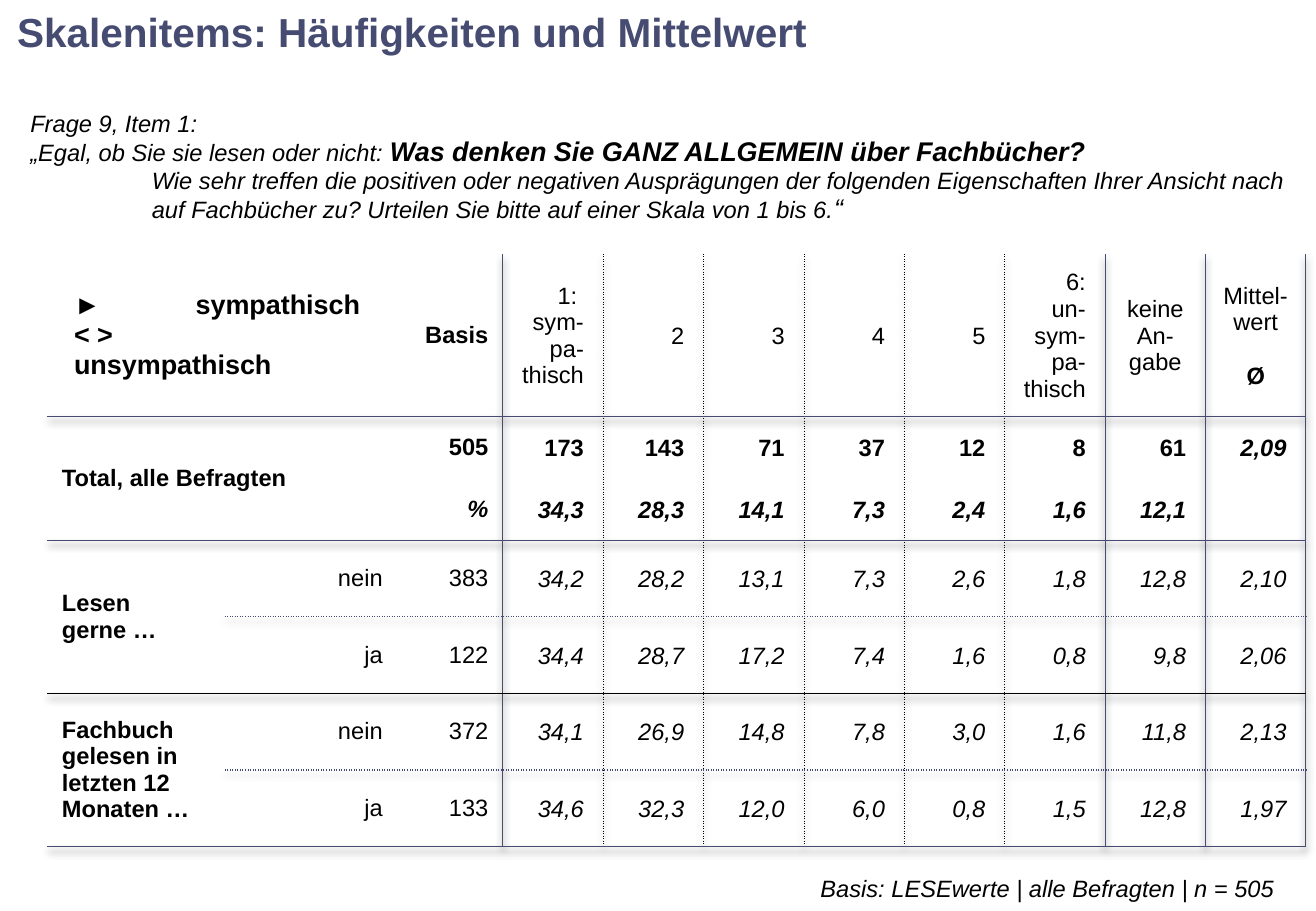
import pptx
import pptx.util
import pptx.oxml
import pptx.oxml.ns
import pptx.dml.color
import pptx.enum.text

Inches = pptx.util.Inches
ALIGN = {"l": pptx.enum.text.PP_ALIGN.LEFT, "c": pptx.enum.text.PP_ALIGN.CENTER,
         "r": pptx.enum.text.PP_ALIGN.RIGHT}
WIDTH, HEIGHT = 10.83, 7.5
NAVY, BLACK = "464B71", "000000"

# Content: a line is a list of (text, size, style); style letters: b bold, i italic
TITLE = [[("Skalenitems: Häufigkeiten und Mittelwert", 24, "b")]]
QUESTION = [
    [("Frage 9, Item 1:", 14, "i")],
    [("„Egal, ob Sie sie lesen oder nicht: ", 14, "i"),
     ("Was denken Sie GANZ ALLGEMEIN über Fachbücher?", 16, "bi")],
    [("Wie sehr treffen die positiven oder negativen Ausprägungen der folgenden "
      "Eigenschaften Ihrer Ansicht nach", 14, "i")],
    [("auf Fachbücher zu? Urteilen Sie bitte auf einer Skala von 1 bis 6.", 14, "i"),
     ("“", 16, "i")],
]
ITEM = "►\tsympathisch\n< >\nunsympathisch"
SCALE = ["1: \nsym-pa-thisch", "2", "3", "4", "5", "6:\nun-\nsym-\npa-thisch",
         "keine\nAn-\ngabe"]
MEAN = [[("Mittel-", 14, "")], [("wert", 14, "")], [("Ø", 14, "b")]]
GROUPS = {  # (row, column): (text, rows spanned, columns spanned)
    (2, 1): ("Total, alle Befragten", 2, 2),
    (4, 1): ("Lesen\ngerne …", 2, 1),
    (6, 1): ("Fachbuch\ngelesen in\nletzten 12\nMonaten …", 2, 1),
}
RESULTS = [  # answer, base, six scale points, no answer, mean
    ("", "505", "173", "143", "71", "37", "12", "8", "61", "2,09"),
    ("", "%", "34,3", "28,3", "14,1", "7,3", "2,4", "1,6", "12,1", ""),
    ("nein", "383", "34,2", "28,2", "13,1", "7,3", "2,6", "1,8", "12,8", "2,10"),
    ("ja", "122", "34,4", "28,7", "17,2", "7,4", "1,6", "0,8", "9,8", "2,06"),
    ("nein", "372", "34,1", "26,9", "14,8", "7,8", "3,0", "1,6", "11,8", "2,13"),
    ("ja", "133", "34,6", "32,3", "12,0", "6,0", "0,8", "1,5", "12,8", "1,97"),
]
SOURCE = [[("Basis: LESEwerte | alle Befragten | n = 505", 14, "i")]]

# Table grid and rules: (colour, points, dash)
LEFT, TOP, TABLE_WIDTH = 0.13, 0.67, 10.62
LABEL_COLUMNS = [0.26, 1.46, 1.42, 0.87]
COLUMNS = LABEL_COLUMNS + [(TABLE_WIDTH - sum(LABEL_COLUMNS)) / 8] * 8
ROWS = [1.42, 1.34] + [0.51] * 2 + [0.63] * 4
SOLID, THIN = (NAVY, 0.75, "solid"), (BLACK, 0.5, "solid")
DOTS, SPLIT = (BLACK, 0.5, "sysDot"), (NAVY, 0.75, "sysDot")
BELOW = {1: (SOLID, 1), 3: (SOLID, 1), 4: (SPLIT, 2), 5: (THIN, 1),
         6: (SPLIT, 2), 7: (SOLID, 1)}  # row: (rule, first column)
BESIDE = {3: SOLID, **dict.fromkeys(range(4, 9), DOTS), **dict.fromkeys((9, 10, 11), SOLID)}
LABEL_INSET, VALUE_INSET = (0.12, 0.05, 0.12, 0.05), (0.01, 0.01, 0.16, 0)
CENTRE_INSET = (0.01, 0.01, 0.01, 0)
MARGINS = ("margin_left", "margin_top", "margin_right", "margin_bottom")


def rgb(value):
    return pptx.dml.color.RGBColor.from_string(value)


def apply(thing, **values):
    for name, value in values.items():
        setattr(thing, name, value)


def element(xml):
    return pptx.oxml.parse_xml(xml.replace(">", " " + pptx.oxml.ns.nsdecls("a") + ">", 1))


def lines(text, size=14, style=""):
    return [[(line, size, style)] for line in text.split("\n")]


def write(frame, content, align="l", color=BLACK):
    paras = [frame.paragraphs[0]] + [frame.add_paragraph() for _ in content[1:]]
    for para, line in zip(paras, content):
        para.alignment = ALIGN[align]
        for text, size, style in line:
            span = para.add_run()
            span.text = text
            apply(span.font, name="Arial", size=pptx.util.Pt(size),
                  bold="b" in style, italic="i" in style)
            span.font.color.rgb = rgb(color)
    return paras


def set_middle(holder, inset):
    apply(holder, vertical_anchor=pptx.enum.text.MSO_ANCHOR.MIDDLE,
          **{name: Inches(length) for name, length in zip(MARGINS, inset)})


def set_frame(frame, inset, wrap):
    set_middle(frame, inset)
    apply(frame, word_wrap=wrap, auto_size=pptx.enum.text.MSO_AUTO_SIZE.NONE)


def fill_cell(cell, content, align="l", inset=LABEL_INSET):
    set_middle(cell, inset)
    return write(cell.text_frame, content, align)


def rule_below(row, column):
    rule, first = BELOW.get(row, (None, 0))
    return rule if column >= first else None


def rule_beside(row, column):
    return BESIDE.get(column) if row else None


def draw_borders(cell, row, column):
    _, down, _ = GROUPS.get((row, column), ("", 1, 1))
    sides = {"lnL": rule_beside(row, column - 1), "lnR": rule_beside(row, column),
             "lnT": rule_below(row - 1, column), "lnB": rule_below(row + down - 1, column)}
    for tag, rule in sides.items():
        if rule:
            color, points, dash = rule
            xml = (f'<a:{tag} w="{int(points * 12700)}"><a:solidFill><a:srgbClr val="{color}"/>'
                   f'</a:solidFill><a:prstDash val="{dash}"/></a:{tag}>')
        else:
            xml = f'<a:{tag} w="0"><a:noFill/></a:{tag}>'
        cell._tc.get_or_add_tcPr().append(element(xml))
    cell.fill.background()


def add_results(page):
    table = page.shapes.add_table(len(ROWS), len(COLUMNS), Inches(LEFT), Inches(TOP),
                                  Inches(TABLE_WIDTH), Inches(sum(ROWS))).table
    apply(table, first_row=False, horz_banding=False)
    properties = table._tbl.tblPr
    properties[0].text = "{2D5ABB26-0587-4C30-8999-92F81FD0307C}"
    properties.insert(0, element(
        '<a:effectLst><a:outerShdw blurRad="50800" dist="38100" dir="5400000">'
        '<a:srgbClr val="000000"><a:alpha val="40000"/></a:srgbClr></a:outerShdw></a:effectLst>'))
    for column, width in zip(table.columns, COLUMNS):
        column.width = Inches(width)
    for row, height in zip(table.rows, ROWS):
        row.height = Inches(height)
    for row in range(len(ROWS)):
        for column in range(len(COLUMNS)):
            draw_borders(table.cell(row, column), row, column)

    # Question and header row
    table.cell(0, 0).merge(table.cell(0, len(COLUMNS) - 1))
    for para in fill_cell(table.cell(0, 0), QUESTION)[2:]:
        para._p.get_or_add_pPr().set("marL", str(Inches(1)))
    table.cell(1, 1).merge(table.cell(1, 2))
    for para in fill_cell(table.cell(1, 1), lines(ITEM, 16, "b")):
        settings = para._p.get_or_add_pPr()
        for name, length in {"marL": 0.1, "indent": 0, "defTabSz": 1}.items():
            settings.set(name, str(Inches(length)))
        settings.append(element(f'<a:tabLst><a:tab pos="{Inches(1.1)}" algn="l"/></a:tabLst>'))
    fill_cell(table.cell(1, 3), lines("Basis", style="b"), "r")
    for column, text in enumerate(SCALE, 4):
        centred = column == 10
        fill_cell(table.cell(1, column), lines(text), "c" if centred else "r",
                  CENTRE_INSET if centred else VALUE_INSET)
    fill_cell(table.cell(1, 11), MEAN, "c", CENTRE_INSET)[-1].space_before = pptx.util.Pt(16)

    # Groups and figures
    for (row, column), (text, down, across) in GROUPS.items():
        table.cell(row, column).merge(table.cell(row + down - 1, column + across - 1))
        fill_cell(table.cell(row, column), lines(text, style="b"))
    for row in (2, 4):
        table.cell(row, 0).merge(table.cell(row + 1, 0))
    for row, values in enumerate(RESULTS, 2):
        for column, text in enumerate(values, 2):
            if text:
                bold = "b" if row < 4 else ""
                italic = "i" if row == 3 or column == 11 or (row > 3 and column > 3) else ""
                fill_cell(table.cell(row, column), lines(text, style=bold + italic), "r",
                          LABEL_INSET if column < 4 else VALUE_INSET)


def main():
    deck = pptx.Presentation()
    apply(deck, slide_width=Inches(WIDTH), slide_height=Inches(HEIGHT))
    page = deck.slides.add_slide(deck.slide_layouts[5])

    # Title
    title = page.shapes.title
    apply(title, left=0, top=0, width=Inches(6.89), height=Inches(0.51))
    set_frame(title.text_frame, (0.14, 0.05, 0.1, 0.05), False)
    write(title.text_frame, TITLE, color=NAVY)

    add_results(page)

    # Source line
    box = page.shapes.add_textbox(Inches(4.39), Inches(7.12), Inches(6.16), Inches(0.36))
    set_frame(box.text_frame, (0.06,) * 4, True)
    para = write(box.text_frame, SOURCE, "r")[0]
    apply(para, line_spacing=1.1, space_before=pptx.util.Pt(3.5), space_after=pptx.util.Pt(3.5))
    deck.save("out.pptx")


if __name__ == "__main__":
    main()
